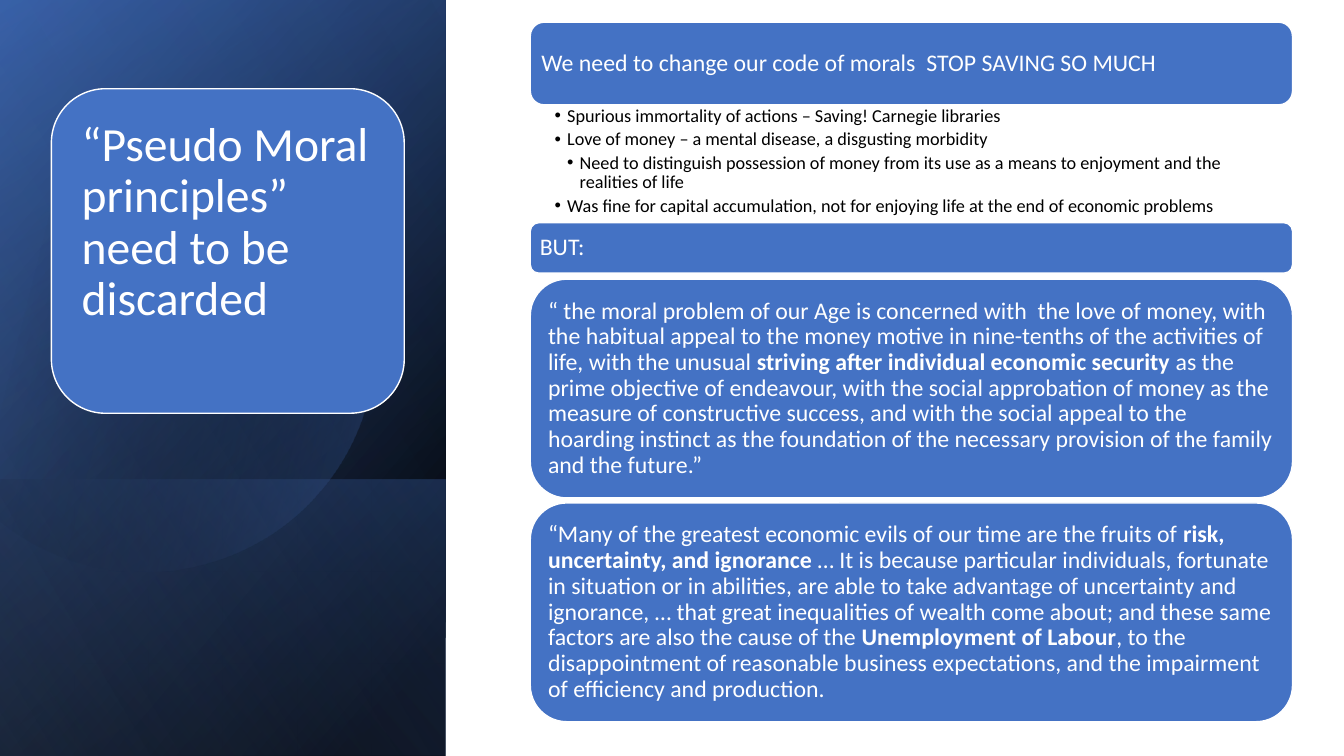
from dataclasses import dataclass
from math import cos, radians, sin

from lxml import etree
from pptx import Presentation
from pptx.dml.color import RGBColor
from pptx.enum.shapes import MSO_SHAPE
from pptx.enum.text import MSO_ANCHOR, MSO_AUTO_SIZE, PP_ALIGN
from pptx.oxml import parse_xml
from pptx.oxml.ns import nsdecls, qn
from pptx.util import Emu, Pt

RECT, ROUNDED = MSO_SHAPE.RECTANGLE, MSO_SHAPE.ROUNDED_RECTANGLE
TOP, MIDDLE, LEFT = MSO_ANCHOR.TOP, MSO_ANCHOR.MIDDLE, PP_ALIGN.LEFT
FIXED = MSO_AUTO_SIZE.NONE

FONT = "Calibri"
BLUE, NAVY, PALE, BLACK, WHITE = "4472C4", "2F5597", "8FAADC", "000000", "FFFFFF"
PANEL_W, SLIDE_W, SLIDE_H = 442, 1333, 750
COLUMN_X, COLUMN_W = 526, 756


@dataclass
class Stop:
    position: int
    colour: str
    opacity: int = 100


@dataclass
class Layer:
    top: int
    height: int
    angle: int
    stops: list[Stop]


@dataclass
class Card:
    top: int
    height: int
    runs: list[tuple[str, bool]]


@dataclass
class Bullet:
    text: str
    level: int = 1


BASE_LAYERS = [
    Layer(0, SLIDE_H, 50, [Stop(8, BLACK), Stop(100, NAVY)]),
    Layer(0, SLIDE_H, 30, [Stop(0, BLACK, 0), Stop(99, BLUE, 46)]),
    Layer(476, 274, 130, [Stop(2, BLUE, 29), Stop(100, BLACK, 30)]),
]
GLAZE = Layer(0, SLIDE_H, 120, [Stop(0, BLACK, 0), Stop(99, PALE, 11)])
DISC_STOPS = [Stop(29, BLACK, 0), Stop(100, BLUE, 43)]
DISC_X, DISC_Y, DISC_W, DISC_H, DISC_TILT = -55, 106, 427, 457, 16.1
DISC_OUTLINE = [
    ("moveTo", [(149, 110)]),
    ("cubicBezTo", [(246, 112), (335, 177), (363, 275)]),
    ("cubicBezTo", [(398, 397), (328, 523), (207, 558)]),
    ("cubicBezTo", [(131, 580), (53, 561), (-3, 514)]),
    ("lnTo", [(-15, 503)]),
    ("lnTo", [(-15, 175)]),
    ("lnTo", [(0, 161)]),
    ("cubicBezTo", [(23, 142), (50, 128), (80, 119)]),
    ("cubicBezTo", [(103, 113), (126, 110), (149, 110)]),
    ("close", []),
]

CARDS = [
    Card(22, 82, [("We need to change our code of morals  STOP SAVING SO MUCH", False)]),
    Card(221, 50, [("BUT:", False)]),
    Card(277, 217, [
        ("“ the moral problem of our Age is concerned with  the love of money, with the "
         "habitual appeal to the money motive in nine-tenths of the activities of life, "
         "with the unusual ", False),
        ("striving after individual economic security", True),
        (" as the  prime objective of endeavour, with the social approbation of money as "
         "the measure of constructive success, and with the social appeal to the hoarding "
         "instinct as the foundation of the necessary provision of the family and the "
         "future.”", False),
    ]),
    Card(499, 217, [
        ("“Many of the greatest economic evils of our time are the fruits of ", False),
        ("risk, uncertainty, and ignorance", True),
        (" … It is because particular individuals, fortunate in situation or in abilities, "
         "are able to take advantage of uncertainty and ignorance, … that great "
         "inequalities of wealth come about; and these same factors are also the cause of "
         "the ", False),
        ("Unemployment of Labour", True),
        (", to the disappointment of reasonable business expectations, and the impairment "
         "of efficiency and production.", False),
    ]),
]
BULLETS = [
    Bullet("Spurious immortality of actions – Saving! Carnegie libraries"),
    Bullet("Love of money – a mental disease, a disgusting morbidity"),
    Bullet("Need to distinguish possession of money from its use as a means to enjoyment "
           "and the realities of life", 2),
    Bullet("Was fine for capital accumulation, not for enjoying life at the end of "
           "economic problems"),
]


def px(n: int) -> Emu:
    return Emu(n * 9144)


def rgb(colour: str) -> RGBColor:
    return RGBColor.from_string(colour)


def place(s, x: int, y: int, w: int, h: int) -> None:
    s.left, s.top, s.width, s.height = px(x), px(y), px(w), px(h)


def gradient(s, angle: int, stops: list[Stop]) -> None:
    s.shadow.inherit = False
    s.line.fill.background()
    s.fill.background()
    grad = parse_xml(f'<a:gradFill {nsdecls("a")} rotWithShape="1"><a:gsLst/></a:gradFill>')
    for stop in stops:
        gs = etree.SubElement(grad[0], qn("a:gs"), pos=str(stop.position * 1000))
        clr = etree.SubElement(gs, qn("a:srgbClr"), val=stop.colour)
        if stop.opacity < 100:
            etree.SubElement(clr, qn("a:alpha"), val=str(stop.opacity * 1000))
    etree.SubElement(grad, qn("a:lin"), ang=str(angle * 60000), scaled="0")
    pr = s._element.spPr
    pr.replace(pr.find(qn("a:noFill")), grad)


def add_layer(shapes, layer: Layer) -> None:
    shift = (PANEL_W - layer.height) // 2
    s = shapes.add_shape(RECT, px(shift), px(layer.top - shift),
                         px(layer.height), px(PANEL_W))
    s.rotation = 90
    s._element.spPr.find(qn("a:xfrm")).set("flipH", "1")
    gradient(s, layer.angle, layer.stops)


def tilt(x: int, y: int) -> tuple[int, int]:
    dx, dy = x - DISC_X - DISC_W / 2, y - DISC_Y - DISC_H / 2
    c, d = cos(radians(DISC_TILT)), sin(radians(DISC_TILT))
    return px(dx * c - dy * d + DISC_W / 2), px(dx * d + dy * c + DISC_H / 2)


def add_disc(shapes) -> None:
    builder = shapes.build_freeform(0, 0)
    builder.add_line_segments([(px(DISC_W), px(DISC_H))])
    s = builder.convert_to_shape()
    place(s, DISC_X, DISC_Y, DISC_W, DISC_H)
    s.rotation = 360 - DISC_TILT
    outline = next(s._element.iter(qn("a:path")))
    for step in list(outline):
        outline.remove(step)
    for command, points in DISC_OUTLINE:
        step = etree.SubElement(outline, qn(f"a:{command}"))
        for point in points:
            x, y = tilt(*point)
            etree.SubElement(step, qn("a:pt"), x=str(x), y=str(y))
    gradient(s, 30, DISC_STOPS)


def add_box(shapes, kind, x: int, y: int, w: int, h: int, colour: str):
    s = shapes.add_shape(kind, px(x), px(y), px(w), px(h))
    s.shadow.inherit = False
    s.fill.solid()
    s.fill.fore_color.rgb = rgb(colour)
    s.line.color.rgb = rgb(WHITE)
    s.line.width = Pt(1)
    return s


def set_frame(tf, insets: tuple[int, int, int, int], anchor) -> None:
    tf.word_wrap, tf.auto_size, tf.vertical_anchor = True, FIXED, anchor
    tf.margin_left, tf.margin_top, tf.margin_right, tf.margin_bottom = map(px, insets)


def write(p, runs: list[tuple[str, bool]], size: int, colour: str, after: float) -> None:
    p.alignment, p.line_spacing = LEFT, 0.9
    p.space_before, p.space_after = Pt(0), Pt(after)
    for text, bold in runs:
        r = p.add_run()
        r.text = text
        r.font.name, r.font.size, r.font.bold = FONT, Pt(size), bold
        r.font.color.rgb = rgb(colour)


def add_card(shapes, card: Card) -> None:
    s = add_box(shapes, ROUNDED, COLUMN_X, card.top, COLUMN_W, card.height, BLUE)
    set_frame(s.text_frame, (7, 7, 7, 7), MIDDLE)
    write(s.text_frame.paragraphs[0], card.runs, 17, WHITE, 6)


def fill_title(shapes) -> None:
    title = shapes.title
    place(title, 67, 104, 319, 290)
    set_frame(title.text_frame, (14, 14, 14, 69), MIDDLE)
    write(title.text_frame.paragraphs[0],
          [("“Pseudo Moral principles” need to be discarded", False)], 34, WHITE, 0)
    shapes._spTree.append(title._element)


def fill_bullets(shapes, body) -> None:
    place(body, COLUMN_X, 104, COLUMN_W, 117)
    tf = body.text_frame
    set_frame(tf, (24, 2, 13, 2), TOP)
    for i, bullet in enumerate(BULLETS):
        p = tf.add_paragraph() if i else tf.paragraphs[0]
        p.level = bullet.level
        write(p, [(bullet.text, False)], 13, BLACK, 2.6)
        pr = p._p.get_or_add_pPr()
        pr.set("marL", str(Pt(9 * bullet.level)))
        pr.set("indent", str(Pt(-9)))
        etree.SubElement(pr, qn("a:buFont"), typeface="Arial")
        etree.SubElement(pr, qn("a:buChar"), char="•")
    shapes._spTree.append(body._element)


def main() -> None:
    prs = Presentation()
    prs.slide_width, prs.slide_height = px(SLIDE_W), px(SLIDE_H)
    slide = prs.slides.add_slide(prs.slide_layouts[1])
    shapes = slide.shapes
    add_box(shapes, RECT, 0, 0, SLIDE_W, SLIDE_H, WHITE).line.fill.background()
    for layer in BASE_LAYERS:
        add_layer(shapes, layer)
    add_disc(shapes)
    add_layer(shapes, GLAZE)
    add_box(shapes, ROUNDED, 51, 88, 350, 322, BLUE)
    fill_title(shapes)
    for card in CARDS:
        add_card(shapes, card)
    fill_bullets(shapes, slide.placeholders[1])
    prs.save("out.pptx")


if __name__ == "__main__":
    main()
